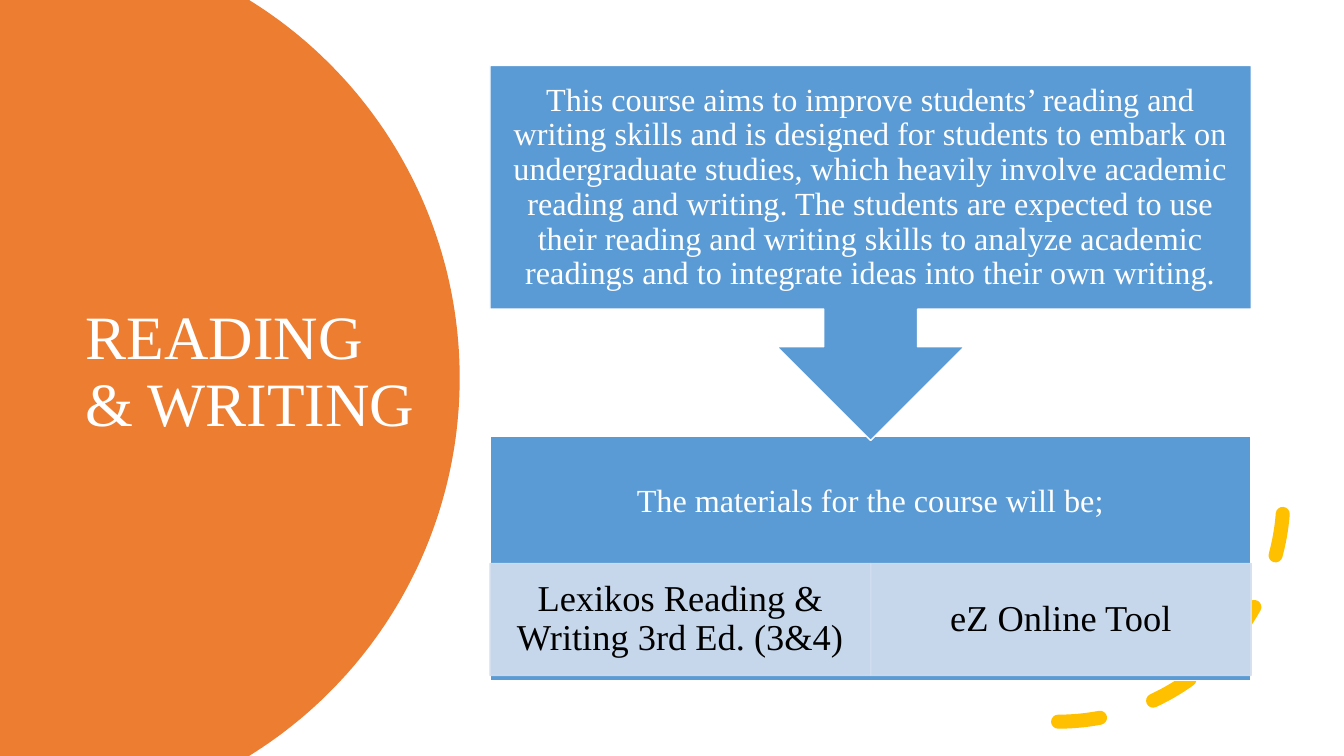
from math import asin, cos, sin

from pptx import Presentation
from pptx.dml.color import RGBColor
from pptx.enum.dml import MSO_LINE
from pptx.enum.shapes import MSO_SHAPE
from pptx.enum.text import MSO_ANCHOR, PP_ALIGN
from pptx.oxml.ns import qn
from pptx.util import Inches, Pt
from lxml.etree import SubElement

WHITE, BLACK = "FFFFFF", "000000"
ORANGE, GOLD = "ED7D31", "FFC000"
BLUE, PALE = "5B9BD5", "D2DEEF"


def color(code):
    return RGBColor.from_string(code)


def write(shape, text, size=23, ink=WHITE, align=PP_ALIGN.CENTER,
          inset=(0.18, 0.18, 0.18, 0.18)):
    frame = shape.text_frame
    frame.word_wrap = True
    frame.vertical_anchor = MSO_ANCHOR.MIDDLE
    (frame.margin_left, frame.margin_top,
     frame.margin_right, frame.margin_bottom) = map(Inches, inset)
    para = frame.paragraphs[0]
    para.alignment = align
    para.line_spacing = 0.9
    run = para.add_run()
    run.text = text
    run.font.name = "Times New Roman"
    run.font.size = Pt(size)
    run.font.color.rgb = color(ink)


class Deck:
    def __init__(self):
        self.file = Presentation()
        self.file.slide_width = Inches(13.33)
        self.file.slide_height = Inches(7.5)
        self.slide = self.file.slides.add_slide(self.file.slide_layouts[6])

    def shape(self, kind, box, fill, line=WHITE, alpha=None):
        item = self.slide.shapes.add_shape(kind, *map(Inches, box))
        item.shadow.inherit = False
        item.fill.solid()
        item.fill.fore_color.rgb = color(fill)
        item.line.color.rgb = color(line)
        item.line.width = Pt(1)
        if alpha:
            for tint in item._element.spPr.iter(qn("a:srgbClr")):
                SubElement(tint, qn("a:alpha"), val=str(alpha * 1000))
        return item

    def label(self, box, text, **style):
        item = self.slide.shapes.add_textbox(*map(Inches, box))
        write(item, text, **style)

    def disc(self, center, middle, radius, fill):
        edge = asin(middle / radius)
        steps = 120
        turns = [edge * (2 * i / steps - 1) for i in range(steps + 1)]
        rim = [(Inches(center + radius * cos(t)),
                Inches(middle + radius * sin(t))) for t in turns]
        build = self.slide.shapes.build_freeform(0, 0)
        build.add_line_segments(rim + [(0, Inches(2 * middle))], close=True)
        item = build.convert_to_shape()
        item.shadow.inherit = False
        item.fill.solid()
        item.fill.fore_color.rgb = color(fill)
        item.line.fill.background()

    def arc(self, box, ink):
        item = self.slide.shapes.add_shape(MSO_SHAPE.ARC, *map(Inches, box))
        item.shadow.inherit = False
        item.fill.background()
        item.line.color.rgb = color(ink)
        item.line.width = Pt(10)
        item.line.dash_style = MSO_LINE.DASH
        item.line._get_or_add_ln().set("cap", "rnd")
        item._element.spPr.xfrm.set("flipV", "1")


def main():
    deck = Deck()
    left, wide = 4.86, 7.55
    half, row = wide / 2, 1.11

    deck.disc(0.15, 3.75, 4.41, ORANGE)
    deck.label((0.75, 1.26, 3.5, 4.88), "READING & WRITING", size=44,
               align=PP_ALIGN.LEFT, inset=(0.1, 0.05, 0.1, 0.05))
    deck.arc((8.26, 2.69, 4.47, 4.47), GOLD)

    base = deck.shape(MSO_SHAPE.RECTANGLE, (left, 4.33, wide, 2.42), BLUE)
    write(base, "The materials for the course will be;",
          inset=(0.18, 0.18, 0.18, 0.18 + row))

    tools = ["Lexikos Reading & Writing 3rd Ed. (3&4)", "eZ Online Tool"]
    for i, text in enumerate(tools):
        cell = deck.shape(MSO_SHAPE.RECTANGLE,
                          (left + i * half, 5.59, half, row),
                          PALE, line=PALE, alpha=90)
        write(cell, text, size=26, ink=BLACK, inset=(0.2, 0.04, 0.2, 0.04))

    call = deck.shape(MSO_SHAPE.UP_ARROW_CALLOUT,
                      (left, 0.65, wide, 3.72), BLUE)
    call.rotation = 180
    deck.label((left, 0.65, wide, 2.42),
               "This course aims to improve students’ reading and writing "
               "skills and is designed for students to embark on "
               "undergraduate studies, which heavily involve academic "
               "reading and writing. The students are expected to use their "
               "reading and writing skills to analyze academic readings and "
               "to integrate ideas into their own writing.")
    deck.file.save("out.pptx")


if __name__ == "__main__":
    main()
